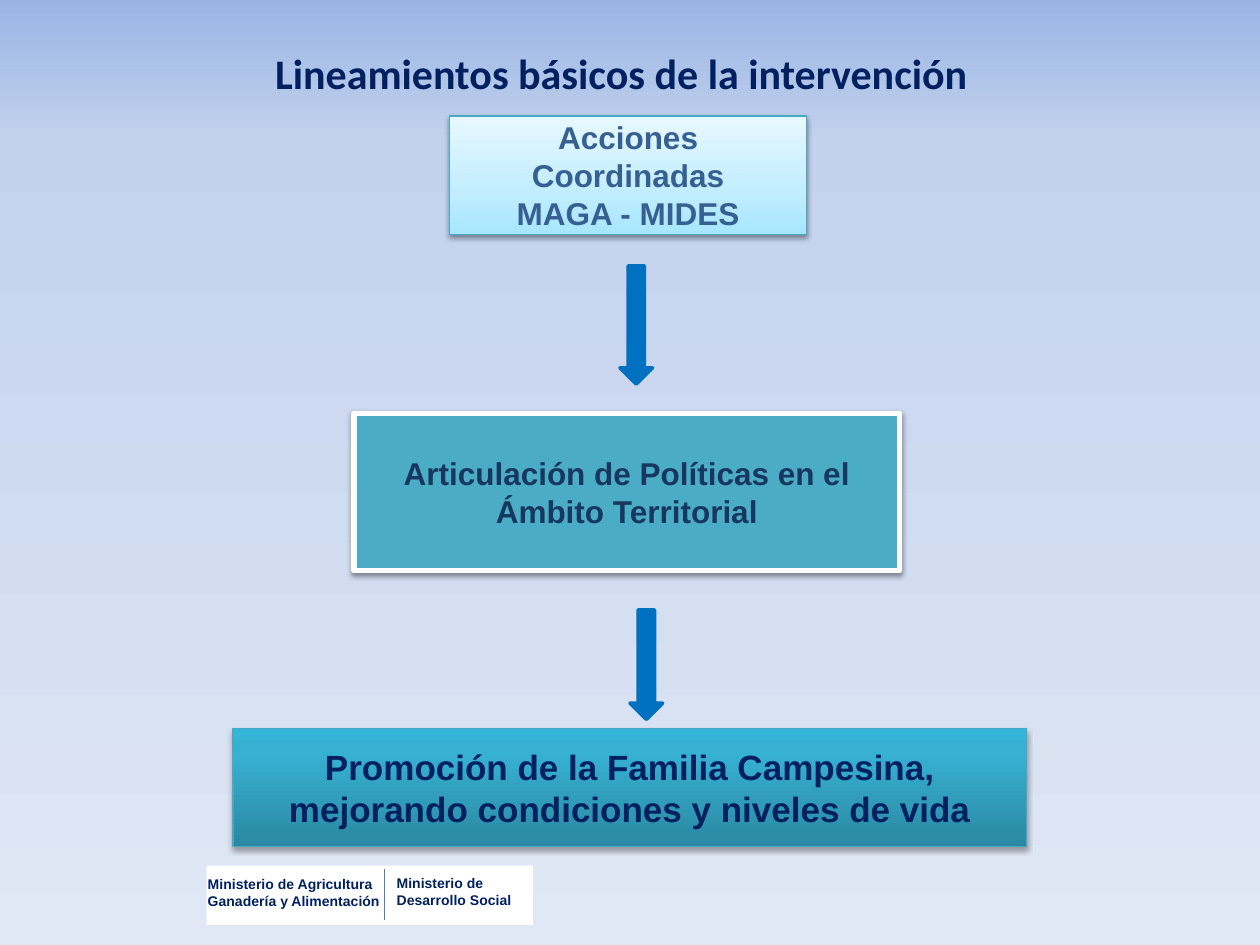
import pptx
import pptx.util
import pptx.dml.color
import pptx.enum.shapes
import pptx.enum.text
import pptx.oxml
import pptx.oxml.ns
from lxml import etree

Inches, Pt = pptx.util.Inches, pptx.util.Pt
RGB = pptx.dml.color.RGBColor
SHAPE = pptx.enum.shapes.MSO_SHAPE
ALIGN = pptx.enum.text.PP_ALIGN
qn = pptx.oxml.ns.qn

NAVY = RGB(0x00, 0x20, 0x60)
SLATE = RGB(0x37, 0x60, 0x92)
DEEP = RGB(0x17, 0x37, 0x5E)
TEAL = RGB(0x4B, 0xAC, 0xC6)
EDGE = RGB(0x46, 0xAA, 0xC5)
BLUE = RGB(0x00, 0x70, 0xC0)
RULE = RGB(0x4B, 0x7E, 0xBC)
WHITE = RGB(0xFF, 0xFF, 0xFF)

SKY = [(0, RGB(0x9A, 0xB5, 0xE4)), (15, RGB(0xC2, 0xD1, 0xED)),
       (100, RGB(0xE1, 0xE8, 0xF5))]
ICE = [(0, RGB(0xA7, 0xE6, 0xFF)), (35, RGB(0xC1, 0xED, 0xFF)),
       (100, RGB(0xE7, 0xF8, 0xFF))]
SEA = [(0, RGB(0x2A, 0x88, 0xA2)), (80, RGB(0x37, 0xB1, 0xD2)),
       (100, RGB(0x34, 0xB4, 0xD6))]

TITLE = "Lineamientos básicos de la intervención "
# place, fill, line colour, line width, shadow (alpha, distance), lines, size, colour
STEPS = [
    ((3.57, 0.92, 2.83, 0.94), ICE, EDGE, 0.75, (38, 1.6),
     ["Acciones Coordinadas", "MAGA - MIDES"], 18, SLATE),
    ((2.81, 3.28, 4.33, 1.25), TEAL, WHITE, 3, (38, 1.6),
     ["Articulación de Políticas en el Ámbito Territorial"], 18, DEEP),
    ((1.85, 5.78, 6.3, 0.94), SEA, EDGE, 0.75, (35, 1.8),
     ["Promoción de la Familia Campesina, mejorando condiciones y niveles de vida"],
     20, NAVY),
]
ARROWS = [(5, 4.84, 0.26, 0.87), (4.92, 2.11, 0.26, 0.94)]
PANEL = (1.64, 6.87, 2.59, 0.47)
LABELS = [
    ((1.55, 6.87, 1.65, 0.43), ["Ministerio de Agricultura Ganadería y Alimentación"]),
    ((3.05, 6.86, 1.16, 0.43), ["Ministerio de", "Desarrollo Social"]),
]


def inch(place):
    return [Inches(v) for v in place]


def blend(fill, root, stops, angle):
    """Give a fill any number of gradient stops; angle runs clockwise."""
    fill.gradient()
    grad = root.find(".//" + qn("a:gradFill"))
    for part in list(grad):
        grad.remove(part)
    group = etree.SubElement(grad, qn("a:gsLst"))
    for pos, color in stops:
        stop = etree.SubElement(group, qn("a:gs"), pos=str(pos * 1000))
        etree.SubElement(stop, qn("a:srgbClr"), val=str(color))
    etree.SubElement(grad, qn("a:lin"), ang=str(angle * 60000), scaled="0")


def shade(shape, alpha, dist):
    """Drop a soft black shadow straight down."""
    effects = shape.element.spPr.find(qn("a:effectLst"))
    outer = etree.SubElement(
        effects, qn("a:outerShdw"), blurRad=str(Pt(3.1)), dist=str(Pt(dist)),
        dir="5400000", rotWithShape="0")
    color = etree.SubElement(outer, qn("a:srgbClr"), val="000000")
    etree.SubElement(color, qn("a:alpha"), val=str(alpha * 1000))


def write(shape, lines, size, color, align, font="Arial"):
    frame = shape.text_frame
    frame.word_wrap = True
    frame.vertical_anchor = pptx.enum.text.MSO_ANCHOR.MIDDLE
    for i, line in enumerate(lines):
        para = frame.add_paragraph() if i else frame.paragraphs[0]
        para.alignment = align
        run = para.add_run()
        run.text = line
        run.font.name = font
        run.font.size = Pt(size)
        run.font.bold = True
        run.font.color.rgb = color


def block(slide, kind, place, fill, line=None, width=0):
    shape = slide.shapes.add_shape(kind, *inch(place))
    shape.shadow.inherit = False
    if isinstance(fill, list):
        blend(shape.fill, shape.element, fill, 270)
    else:
        shape.fill.solid()
        shape.fill.fore_color.rgb = fill
    if line is None:
        shape.line.fill.background()
    else:
        shape.line.color.rgb = line
        shape.line.width = Pt(width)
    return shape


def main():
    deck = pptx.Presentation()
    deck.slide_width, deck.slide_height = Inches(10), Inches(7.5)
    slide = deck.slides.add_slide(deck.slide_layouts[5])
    blend(slide.background.fill, slide.element, SKY, 90)

    title = slide.shapes.title
    title.left, title.top, title.width, title.height = inch((1.59, 0.33, 6.76, 0.45))
    write(title, [TITLE], 24, NAVY, ALIGN.CENTER, "Calibri")
    title.text_frame.word_wrap = False
    title.text_frame.auto_size = pptx.enum.text.MSO_AUTO_SIZE.SHAPE_TO_FIT_TEXT
    title.text_frame.margin_bottom = 0

    for place, fill, line, width, shadow, lines, size, color in STEPS:
        step = block(slide, SHAPE.RECTANGLE, place, fill, line, width)
        shade(step, *shadow)
        write(step, lines, size, color, ALIGN.CENTER)

    block(slide, SHAPE.RECTANGLE, PANEL, WHITE)
    for place, lines in LABELS:
        label = slide.shapes.add_textbox(*inch(place))
        write(label, lines, 8, NAVY, ALIGN.LEFT)

    rule = slide.shapes.add_connector(
        pptx.enum.shapes.MSO_CONNECTOR.STRAIGHT, *inch((3.05, 7.3, 3.05, 6.9)))
    rule.line.color.rgb = RULE
    rule.line.width = Pt(0.75)
    etree.SubElement(rule.element.spPr, qn("a:effectLst"))

    for place in ARROWS:
        block(slide, SHAPE.DOWN_ARROW, place, BLUE, BLUE, 2)

    deck.save("out.pptx")


if __name__ == "__main__":
    main()
